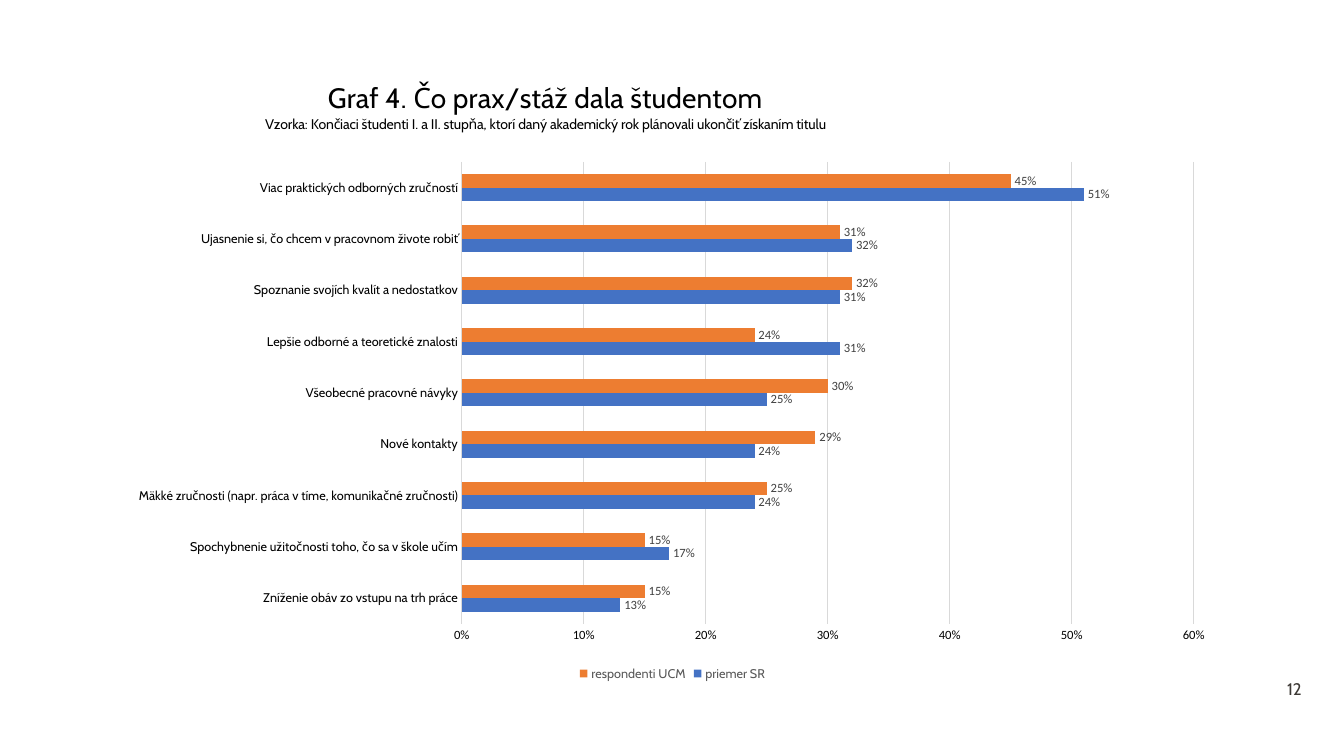
from dataclasses import dataclass

from lxml import etree
from pptx import Presentation
from pptx.chart.data import CategoryChartData as ChartData
from pptx.dml.color import RGBColor as Rgb
from pptx.enum.chart import XL_CHART_TYPE as Kind
from pptx.enum.chart import XL_LABEL_POSITION as LabelPos
from pptx.enum.chart import XL_LEGEND_POSITION as LegendPos
from pptx.enum.chart import XL_TICK_MARK as Tick
from pptx.enum.text import MSO_ANCHOR as Anchor
from pptx.enum.text import PP_ALIGN as Align
from pptx.oxml.ns import qn
from pptx.util import Inches, Pt


@dataclass(frozen=True)
class Theme:
    head: str = "Cabin"
    body: str = "Calibri"
    black: str = "000000"
    dark: str = "404040"
    mid: str = "595959"
    grid: str = "D9D9D9"
    page: str = "3D3935"
    blue: str = "4472C4"
    orange: str = "ED7D31"
    big: float = 20
    sub: float = 10
    num: float = 12
    small: float = 9


theme = Theme()


def style(font, size, name, color):
    font.size = Pt(size)
    font.name = name
    font.bold = False
    font.color.rgb = Rgb.from_string(color)


def place(node, **spots):
    """Give a chart part a manual layout, in fractions of the chart."""
    layout = node.find(qn("c:layout"))
    if layout is None:
        layout = etree.Element(qn("c:layout"))
        text = node.find(qn("c:tx"))
        node.insert(0 if text is None else 1, layout)
    manual = etree.SubElement(layout, qn("c:manualLayout"))
    for tag, val in spots.items():
        etree.SubElement(manual, qn(f"c:{tag}")).set("val", str(val))


prs = Presentation()
prs.slide_width, prs.slide_height = Inches(13.33), Inches(7.5)
slide = prs.slides.add_slide(prs.slide_layouts[6])

# Survey data, from the bottom bar up: label, country average, UCM
rows = [
    ("Zníženie obáv zo vstupu na trh práce", 0.13, 0.15),
    ("Spochybnenie užitočnosti toho, čo sa v škole učím", 0.17, 0.15),
    ("Mäkké zručnosti (napr. práca v tíme, komunikačné zručnosti)", 0.24, 0.25),
    ("Nové kontakty", 0.24, 0.29),
    ("Všeobecné pracovné návyky", 0.25, 0.3),
    ("Lepšie odborné a teoretické znalosti", 0.31, 0.24),
    ("Spoznanie svojích kvalít a nedostatkov", 0.31, 0.32),
    ("Ujasnenie si, čo chcem v pracovnom živote robiť", 0.32, 0.31),
    ("Viac praktických odborných zručností", 0.51, 0.45),
]
names, mean, ucm = zip(*rows)
data = ChartData(number_format="0%")
data.categories = names
data.add_series("priemer SR", mean)
data.add_series("respondenti UCM", ucm)

# Bar chart
frame = slide.shapes.add_chart(
    Kind.BAR_CLUSTERED, Inches(1.17), Inches(0.69), Inches(11), Inches(6.11), data
)
chart = frame.chart
style(chart.font, 10, theme.body, theme.black)
plot = chart.plots[0]
plot.gap_width, plot.overlap = 182, 0
plot.vary_by_categories = False
for bars, color in zip(plot.series, (theme.blue, theme.orange)):
    bars.format.fill.solid()
    bars.format.fill.fore_color.rgb = Rgb.from_string(color)
    bars.invert_if_negative = False
    labels = bars.data_labels
    labels.show_value = True
    labels.position = LabelPos.OUTSIDE_END
    labels.number_format, labels.number_format_is_linked = "0%", False
    style(labels.font, theme.small, theme.body, theme.dark)

# Axes and grid
cats, vals = chart.category_axis, chart.value_axis
for axis, face in ((cats, theme.head), (vals, theme.body)):
    axis.major_tick_mark = axis.minor_tick_mark = Tick.NONE
    style(axis.tick_labels.font, theme.small, face, theme.black)
vals.minimum_scale, vals.maximum_scale, vals.major_unit = 0, 0.6, 0.1
vals.tick_labels.number_format = "0%"
vals.tick_labels.number_format_is_linked = False
vals.format.line.fill.background()
vals.has_major_gridlines = True
cats.has_major_gridlines = False
for line in (cats.format.line, vals.major_gridlines.format.line):
    line.color.rgb = Rgb.from_string(theme.grid)
    line.width = Pt(0.75)

# Chart title in two lines
chart.has_title = True
title = chart.chart_title
title.include_in_layout = False
text = title.text_frame
text.text = (
    "Graf 4. Čo prax/stáž dala študentom\n"
    "Vzorka: Končiaci študenti I. a II. stupňa, ktorí daný akademický rok "
    "plánovali ukončiť získaním titulu"
)
for para, size in zip(text.paragraphs, (theme.big, theme.sub)):
    para.alignment = Align.CENTER
    style(para.font, size, theme.head, theme.black)
    style(para.runs[0].font, size, theme.head, theme.black)

# Legend
chart.has_legend = True
legend = chart.legend
legend.position = LegendPos.BOTTOM
legend.include_in_layout = False
style(legend.font, theme.small, theme.head, theme.mid)

# Title and plot positions
place(title._element, xMode="edge", yMode="edge", x=0.13, y=0.01)
area = plot._element.getparent()
place(area, layoutTarget="inner", xMode="edge", yMode="edge",
      x=0.31, y=0.15, w=0.66, h=0.75)

# Page number
box = slide.shapes.add_textbox(Inches(12.25), Inches(6.67), Inches(0.76), Inches(0.32))
box.text_frame.word_wrap = True
box.text_frame.vertical_anchor = Anchor.MIDDLE
page = box.text_frame.paragraphs[0]
page.text = "12"
page.alignment = Align.RIGHT
style(page.runs[0].font, theme.num, theme.head, theme.page)

prs.save("out.pptx")
